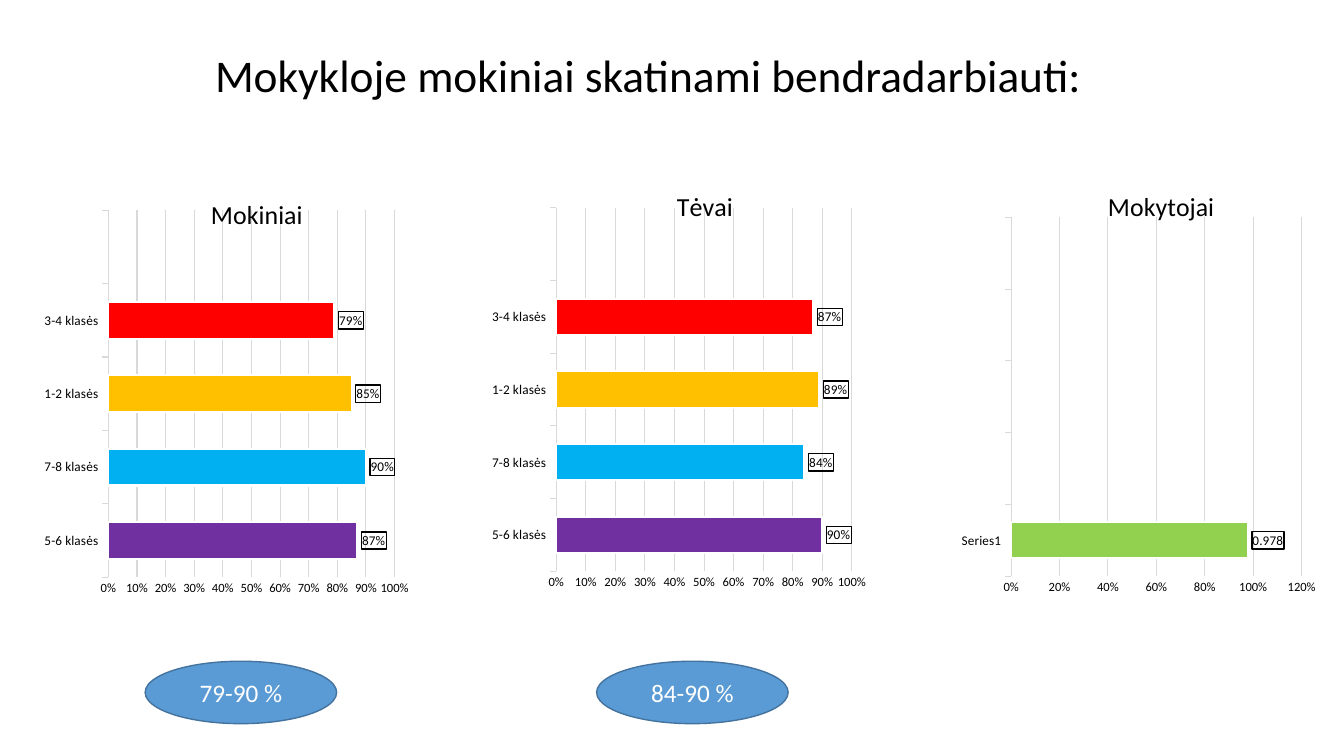
from lxml import etree
from pptx import Presentation
from pptx.chart.data import CategoryChartData
from pptx.dml.color import RGBColor
from pptx.enum.chart import XL_CHART_TYPE, XL_LABEL_POSITION, XL_TICK_MARK
from pptx.enum.shapes import MSO_SHAPE
from pptx.enum.text import MSO_ANCHOR, PP_ALIGN
from pptx.oxml import parse_xml
from pptx.oxml.ns import nsdecls, qn
from pptx.util import Pt

BAR = XL_CHART_TYPE.BAR_CLUSTERED
OUT_END = XL_LABEL_POSITION.OUTSIDE_END
TICK_OUT = XL_TICK_MARK.OUTSIDE
TICK_NONE = XL_TICK_MARK.NONE
OVAL = MSO_SHAPE.OVAL
MIDDLE = MSO_ANCHOR.MIDDLE
CENTER = PP_ALIGN.CENTER
FACE = "Calibri"


def color(code):
    return RGBColor.from_string(code)


def style(font, size, code="000000"):
    font.name = FACE
    font.size = Pt(size)
    font.bold = False
    font.color.rgb = color(code)


deck = Presentation()
deck.slide_width = Pt(960)
deck.slide_height = Pt(540)
slide = deck.slides.add_slide(deck.slide_layouts[6])

box = slide.shapes.add_textbox(Pt(61.2), Pt(20.5), Pt(803.5), Pt(70))
frame = box.text_frame
frame.word_wrap = True
frame.vertical_anchor = MIDDLE
para = frame.paragraphs[0]
para.alignment = CENTER
para.line_spacing = 0.9
run = para.add_run()
run.text = "Mokykloje mokiniai skatinami bendradarbiauti:"
style(run.font, 32.4)

grades = ["5-6 klasės", "7-8 klasės", "1-2 klasės", "3-4 klasės", ""]
staff = ["Series1", "", "", "", ""]
hues = ["7030A0", "00B0F0", "FFC000", "FF0000"]
charts = [
    ("Mokiniai", (31.7, 119.5, 260.6, 340.6), grades, [0.87, 0.9, 0.85, 0.79, None],
     hues, (0.17, 0.09, 0.79, 0.77), 0.44, 1, 0.1, "0%"),
    ("Tėvai", (351.4, 113.8, 267.8, 346.3), grades, [0.9, 0.84, 0.89, 0.87, None],
     hues, (0.17, 0.1, 0.79, 0.75), 0.48, 1, 0.1, "0%"),
    ("Mokytojai", (686.9, 113.8, 255.6, 346.3), staff, [0.978, None, None, None, None],
     ["92D050"], (0.13, 0.12, 0.82, 0.74), 0.39, 1.2, 0.2, "General"),
]

for name, place, cats, vals, fills, plot_box, left, top, step, code in charts:
    data = CategoryChartData()
    data.categories = cats
    data.add_series(name, vals)
    chart = slide.shapes.add_chart(BAR, *[Pt(n) for n in place], data).chart
    chart.has_legend = False
    style(chart.font, 10)

    chart.has_title = True
    head = chart.chart_title
    run = head.text_frame.paragraphs[0].add_run()
    run.text = name
    style(run.font, 18.6)

    plot = chart.plots[0]
    plot.gap_width = 100
    plot.vary_by_categories = False
    bars = plot.series[0]
    for i, fill in enumerate(fills):
        look = bars.points[i].format
        look.fill.solid()
        look.fill.fore_color.rgb = color(fill)
        look.line.color.rgb = color("FFFFFF")
        look.line.width = Pt(1.5)

    tags = bars.data_labels
    tags.show_value = True
    tags.position = OUT_END
    tags.number_format = code
    tags.number_format_is_linked = False
    style(tags.font, 9.5)
    edge = parse_xml(
        f'<c:spPr {nsdecls("c", "a")}><a:noFill/><a:ln w="12700"><a:solidFill>'
        '<a:srgbClr val="000000"/></a:solidFill></a:ln></c:spPr>')
    tags._element.find(qn("c:numFmt")).addnext(edge)

    rows = chart.category_axis
    rows.major_tick_mark = TICK_OUT
    rows.format.line.color.rgb = color("D9D9D9")
    rows.format.line.width = Pt(0.75)
    style(rows.tick_labels.font, 9.5)

    scale = chart.value_axis
    scale.minimum_scale = 0
    scale.maximum_scale = top
    scale.major_unit = step
    scale.major_tick_mark = TICK_NONE
    scale.format.line.fill.background()
    grid = scale.major_gridlines.format.line
    grid.color.rgb = color("D9D9D9")
    grid.width = Pt(0.75)
    scale.tick_labels.number_format = "0%"
    scale.tick_labels.number_format_is_linked = False
    style(scale.tick_labels.font, 9)

    area = chart._chartSpace.find(".//" + qn("c:plotArea"))
    spots = [(head._element, 1, {"x": left, "y": 0.05}),
             (area, 0, dict(zip("xywh", plot_box)))]
    for part, index, sizes in spots:
        for old in part.findall(qn("c:layout")):
            part.remove(old)
        layout = etree.Element(qn("c:layout"))
        manual = etree.SubElement(layout, qn("c:manualLayout"))
        if part is area:
            etree.SubElement(manual, qn("c:layoutTarget")).set("val", "inner")
        for key in "xy":
            etree.SubElement(manual, qn(f"c:{key}Mode")).set("val", "edge")
        for key, size in sizes.items():
            etree.SubElement(manual, qn(f"c:{key}")).set("val", str(size))
        part.insert(index, layout)

for left, words in [(426.2, "84-90 %"), (103.7, "79-90 %")]:
    oval = slide.shapes.add_shape(OVAL, Pt(left), Pt(472.3), Pt(136.8), Pt(44.6))
    oval.shadow.inherit = False
    oval.fill.solid()
    oval.fill.fore_color.rgb = color("5B9BD5")
    oval.line.color.rgb = color("43739E")
    oval.line.width = Pt(1)
    frame = oval.text_frame
    frame.vertical_anchor = MIDDLE
    para = frame.paragraphs[0]
    para.alignment = CENTER
    run = para.add_run()
    run.text = words
    style(run.font, 18, "FFFFFF")

deck.save("out.pptx")
